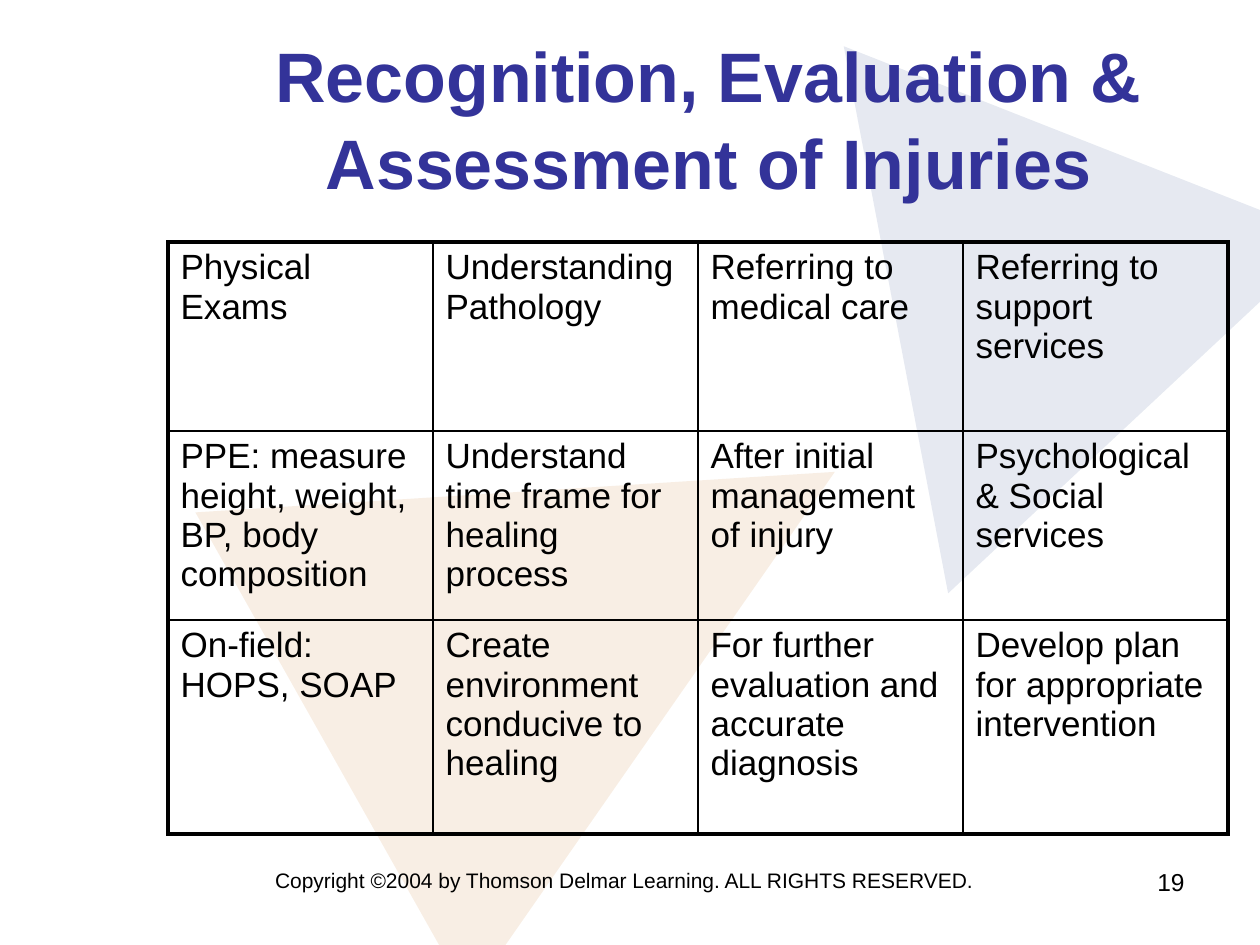
from lxml.etree import SubElement
from pptx import Presentation
from pptx.dml.color import RGBColor
from pptx.enum.shapes import MSO_SHAPE
from pptx.enum.text import MSO_ANCHOR, PP_ALIGN
from pptx.oxml.ns import qn
from pptx.util import Pt

PX = 914400 / 126
COLORS = {"orange": "C66D0F", "blue": "1D3E83", "title": "333399", "text": "000000"}


def place(*lengths):
    return [round(length * PX) for length in lengths]


def style_text(paragraph, size, color="text", bold=False, align=PP_ALIGN.LEFT):
    paragraph.alignment = align
    font_format = {"name": "Arial", "size": Pt(size), "bold": bold}
    for name, value in font_format.items():
        setattr(paragraph.font, name, value)
    paragraph.font.color.rgb = RGBColor.from_string(COLORS[color])


presentation = Presentation()
presentation.slide_width, presentation.slide_height = place(1260, 945)
slide = presentation.slides.add_slide(presentation.slide_layouts[5])
title = slide.shapes.title

triangles = [
    ("orange", (305, 325, 557, 577), 60.6),
    ("blue", (834, 58, 557, 441), 79.2),
]
for color, box, rotation in triangles:
    shape = slide.shapes.add_shape(MSO_SHAPE.ISOSCELES_TRIANGLE, *place(*box))
    shape.rotation = rotation
    shape.shadow.inherit = False
    shape.line.fill.background()
    shape.fill.solid()
    shape.fill.fore_color.rgb = RGBColor.from_string(COLORS[color])
    color_element = shape.fill._xPr.find(".//" + qn("a:srgbClr"))
    SubElement(color_element, qn("a:alpha"), val="11000")
    title._element.addprevious(shape._element)

title.left, title.top, title.width, title.height = place(220, 38, 977, 157)
title.text_frame.text = "Recognition, Evaluation & Assessment of Injuries"
title.text_frame.vertical_anchor = MSO_ANCHOR.MIDDLE
title_paragraph = title.text_frame.paragraphs[0]
title_paragraph.line_spacing = 1.04
style_text(title_paragraph, 40, "title", True, PP_ALIGN.CENTER)

footers = [
    ("Copyright ©2004 by Thomson Delmar Learning. ALL RIGHTS RESERVED.",
     (199, 861, 851, 65), 12, PP_ALIGN.CENTER),
    ("19", (1061, 861, 136, 65), 14, PP_ALIGN.RIGHT),
]
for text, box, size, align in footers:
    text_box = slide.shapes.add_textbox(*place(*box))
    text_box.text_frame.word_wrap = True
    text_box.text_frame.text = text
    style_text(text_box.text_frame.paragraphs[0], size, align=align)

rows = [
    ["Physical Exams", "Understanding Pathology",
     "Referring to medical care", "Referring to support services"],
    ["PPE: measure height, weight, BP, body composition",
     "Understand time frame for healing process",
     "After initial management of injury", "Psychological & Social services"],
    ["On-field: HOPS, SOAP", "Create environment conducive to healing",
     "For further evaluation and accurate diagnosis",
     "Develop plan for appropriate intervention"],
]
row_heights = [189, 189, 214]
last_row, last_column = len(rows) - 1, len(rows[0]) - 1
table = slide.shapes.add_table(3, 4, *place(168, 242, 1060, 592)).table
table.first_row = table.horz_banding = False
for column in table.columns:
    column.width = place(265)[0]

for row_index, (texts, height) in enumerate(zip(rows, row_heights)):
    table.rows[row_index].height = place(height)[0]
    for column_index, text in enumerate(texts):
        cell = table.cell(row_index, column_index)
        cell.text = text
        style_text(cell.text_frame.paragraphs[0], 20)
        properties = cell._tc.get_or_add_tcPr()
        outer_edges = {
            "a:lnL": column_index == 0,
            "a:lnR": column_index == last_column,
            "a:lnT": row_index == 0,
            "a:lnB": row_index == last_row,
        }
        for tag, is_outer in outer_edges.items():
            width = Pt(2.25 if is_outer else 1)
            border = SubElement(properties, qn(tag), w=str(width))
            border_fill = SubElement(border, qn("a:solidFill"))
            SubElement(border_fill, qn("a:srgbClr"), val=COLORS["text"])
        cell.fill.background()

presentation.save("out.pptx")
